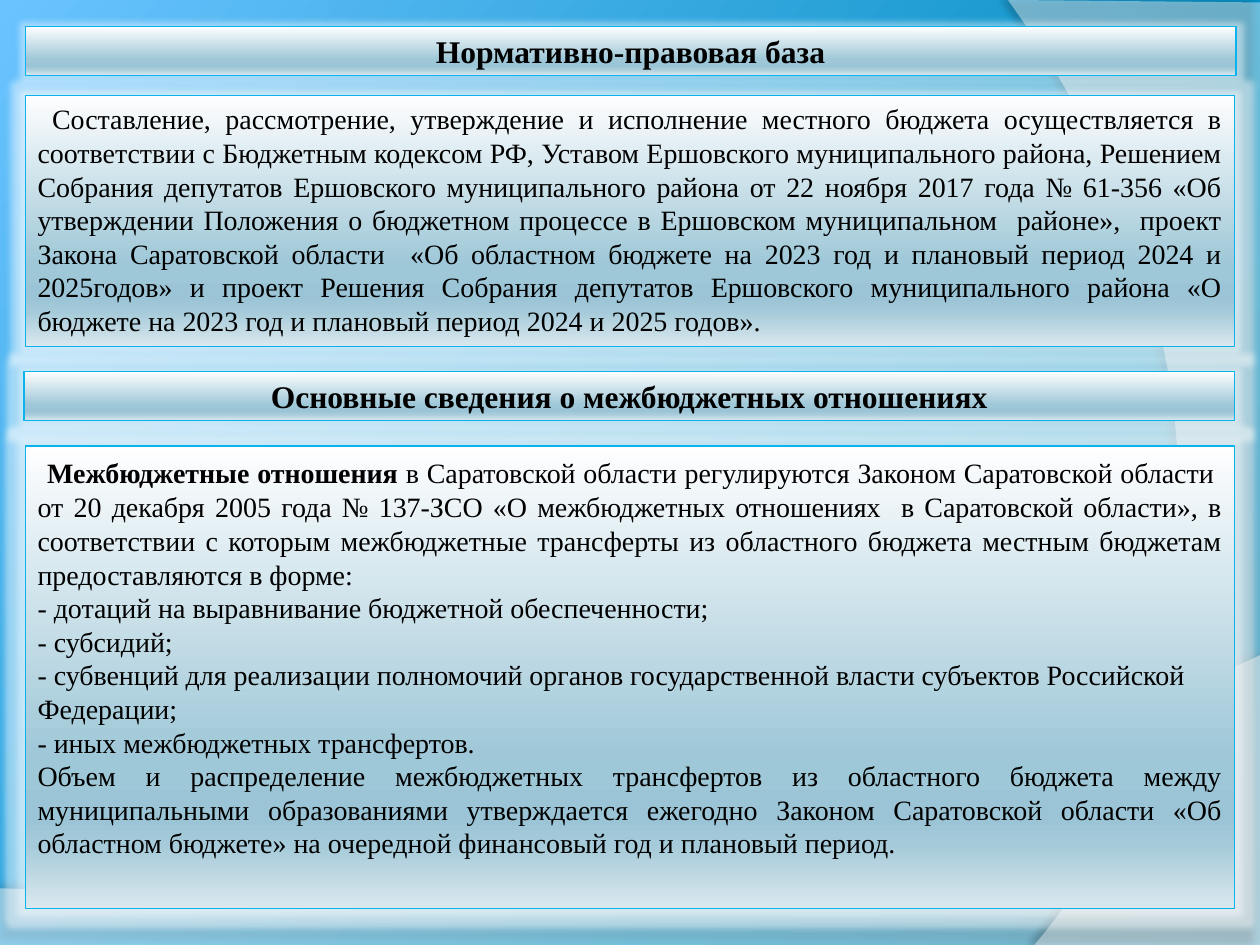
from dataclasses import dataclass

import lxml.etree
import pptx
import pptx.dml.color
import pptx.enum.shapes
import pptx.enum.text
import pptx.oxml.ns
import pptx.util

RGB = pptx.dml.color.RGBColor
ALIGN = pptx.enum.text.PP_ALIGN
ANCHOR = pptx.enum.text.MSO_ANCHOR
qn = pptx.oxml.ns.qn

BLACK = RGB(0x00, 0x00, 0x00)
WHITE = RGB(0xFF, 0xFF, 0xFF)
EDGE = RGB(0x0A, 0xB3, 0xEC)
SKY = [(0, RGB(0x00, 0x76, 0xA1)), (30, RGB(0x00, 0x8D, 0xC0)),
       (100, RGB(0x6A, 0xC3, 0xFF))]
STEEL = [(0, RGB(0xFE, 0xFE, 0xFF)), (68, RGB(0x9E, 0xC7, 0xD7)),
         (81, RGB(0x9B, 0xC5, 0xD6)), (86, RGB(0xA5, 0xCA, 0xD9)),
         (100, RGB(0xDA, 0xE8, 0xEE))]
SERIF = "Times New Roman"
CELL = pptx.util.Inches(0.1)  # the slide is a grid of 100 columns by 75 rows


@dataclass
class Run:
    text: str
    size: int = 16
    bold: bool = False
    name: str = SERIF


@dataclass
class Para:
    runs: list[Run]
    align: int = ALIGN.JUSTIFY


@dataclass
class Panel:
    left: float
    top: float
    width: float
    height: float
    paras: list[Para]
    head: bool = False


@dataclass
class Wave:
    start: tuple
    legs: list  # a point is a line, three points are a Bezier curve
    alpha: int
    shade: dict
    dark: int


def grid(n: float) -> int:
    return round(n * CELL)


def add(parent, tag: str, **attrs):
    return lxml.etree.SubElement(parent, qn(tag), {k: str(v) for k, v in attrs.items()})


def tint(parent, color: RGB, alpha: int = 100) -> None:
    node = add(parent, "a:srgbClr", val=color)
    if alpha < 100:
        add(node, "a:alpha", val=alpha * 1000)


def blend(fill, root, stops: list, angle: int) -> None:
    fill.gradient()
    fill.gradient_angle = angle
    band = next(root.iter(qn("a:gsLst")))
    for old in list(band):
        band.remove(old)
    for pos, color in stops:
        tint(add(band, "a:gs", pos=pos * 1000), color)


def effect(shape, tag: str, color: RGB, alpha: int, **attrs) -> None:
    shape.shadow.inherit = False
    node = next(shape._element.iter(qn("a:effectLst")))
    tint(add(node, tag, **attrs), color, alpha)


def curve(a: tuple, b: tuple, c: tuple, d: tuple, steps: int = 40) -> list:
    def mix(t: float, i: int) -> float:
        u = 1 - t
        return u**3 * a[i] + 3 * u * u * t * b[i] + 3 * u * t * t * c[i] + t**3 * d[i]
    return [(mix(n / steps, 0), mix(n / steps, 1)) for n in range(1, steps + 1)]


def draw_wave(slide, wave: Wave) -> None:
    dots = [wave.start]
    for leg in wave.legs:
        dots += curve(dots[-1], *leg) if len(leg) == 3 else [leg]
    pen = slide.shapes.build_freeform(*map(grid, dots[0]), scale=1.0)
    pen.add_line_segments([tuple(map(grid, dot)) for dot in dots[1:]])
    shape = pen.convert_to_shape()
    shape.fill.solid()
    shape.fill.fore_color.rgb = WHITE
    add(next(shape._element.iter(qn("a:srgbClr"))), "a:alpha", val=wave.alpha * 1000)
    shape.line.fill.background()
    effect(shape, "a:outerShdw", BLACK, wave.dark, **wave.shade)


def draw_panel(shape, panel: Panel) -> None:
    for key in ("left", "top", "width", "height"):
        setattr(shape, key, grid(getattr(panel, key)))
    blend(shape.fill, shape._element, STEEL, 270)
    shape.line.color.rgb = EDGE
    shape.line.width = pptx.util.Pt(0.75)
    effect(shape, "a:glow", WHITE, 45, rad=grid(1))

    frame = shape.text_frame
    side = grid(0.5 if panel.head else 1)
    look = {"word_wrap": True, "auto_size": pptx.enum.text.MSO_AUTO_SIZE.NONE,
            "vertical_anchor": ANCHOR.MIDDLE if panel.head else ANCHOR.TOP,
            "margin_left": side, "margin_right": side,
            "margin_top": grid(0.5), "margin_bottom": grid(0.5)}
    for key, value in look.items():
        setattr(frame, key, value)
    for n, para in enumerate(panel.paras):
        line = frame.add_paragraph() if n else frame.paragraphs[0]
        line.alignment = para.align
        for run in para.runs:
            piece = line.add_run()
            piece.text = run.text
            piece.font.color.rgb = BLACK
            for key in ("size", "bold", "name"):
                value = getattr(run, key)
                setattr(piece.font, key, pptx.util.Pt(value) if key == "size" else value)


def title(text: str) -> list[Para]:
    return [Para([Run(text, 18, True)], ALIGN.CENTER)]


WAVES = [
    Wave((0, 70.5), [(0, 75.1), (100, 75.1), (100, 52), ((55.9, 72.9), (39.1, 71.9), (0, 70.5))],
         45, {"blurRad": 50800, "dist": 44450, "dir": 16200000}, 35),
    Wave((100, 0.2), [(100, 75), (82.1, 75), ((93.5, 61.9), (101.8, 30), (80, 0)), (100, 0.2)],
         40, {"blurRad": 50800, "dist": 50800, "dir": 10800000}, 45),
]

ITEMS = [
    "- дотаций на выравнивание бюджетной обеспеченности;",
    "- субсидий;",
    "- субвенций для реализации полномочий органов государственной власти субъектов "
    "Российской Федерации;",
    "- иных межбюджетных трансфертов.",
]

PANELS = [
    Panel(2, 2.1, 96.1, 3.9, title("Нормативно-правовая база"), True),
    Panel(2, 7.6, 96, 19.9, [Para([Run(
        " Составление, рассмотрение, утверждение и исполнение местного бюджета осуществляется "
        "в соответствии с Бюджетным кодексом РФ, Уставом Ершовского муниципального района, "
        "Решением Собрания депутатов Ершовского муниципального района от 22 ноября 2017 года "
        "№ 61-356 «Об утверждении Положения о бюджетном процессе в Ершовском муниципальном  "
        "районе»,  проект Закона Саратовской области  «Об областном бюджете на 2023 год и "
        "плановый период 2024 и 2025годов» и проект Решения Собрания депутатов Ершовского "
        "муниципального района «О бюджете на 2023 год и плановый период 2024 и 2025 годов».")])]),
    Panel(1.9, 29.5, 96.1, 3.9, title("Основные сведения о межбюджетных отношениях"), True),
    Panel(2, 35.4, 96, 36.7, [
        Para([Run(" ", 18, name="Arial"), Run("Межбюджетные отношения", bold=True), Run(
            " в Саратовской области регулируются Законом Саратовской области  от 20 декабря "
            "2005 года № 137-ЗСО «О межбюджетных отношениях  в Саратовской области», в "
            "соответствии с которым межбюджетные трансферты из областного бюджета местным "
            "бюджетам предоставляются в форме:")]),
        *[Para([Run(item)], ALIGN.LEFT) for item in ITEMS],
        Para([Run(
            "Объем и распределение межбюджетных трансфертов из областного бюджета между "
            "муниципальными образованиями утверждается ежегодно Законом Саратовской области "
            "«Об областном бюджете» на очередной финансовый год и плановый период.")]),
    ]),
]


def main() -> None:
    deck = pptx.Presentation()
    deck.slide_width, deck.slide_height = grid(100), grid(75)
    slide = deck.slides.add_slide(deck.slide_layouts[5])

    # Background and its two pale waves
    blend(slide.background.fill, slide._element, SKY, 143)
    for wave in WAVES:
        draw_wave(slide, wave)

    # Title above the waves, then the other panels
    top, *rest = PANELS
    name = slide.shapes.title
    slide.shapes._spTree.append(name._element)
    draw_panel(name, top)
    for panel in rest:
        shape = slide.shapes.add_shape(
            pptx.enum.shapes.MSO_SHAPE.RECTANGLE, 0, 0, CELL, CELL)
        draw_panel(shape, panel)

    deck.save("out.pptx")


if __name__ == "__main__":
    main()
